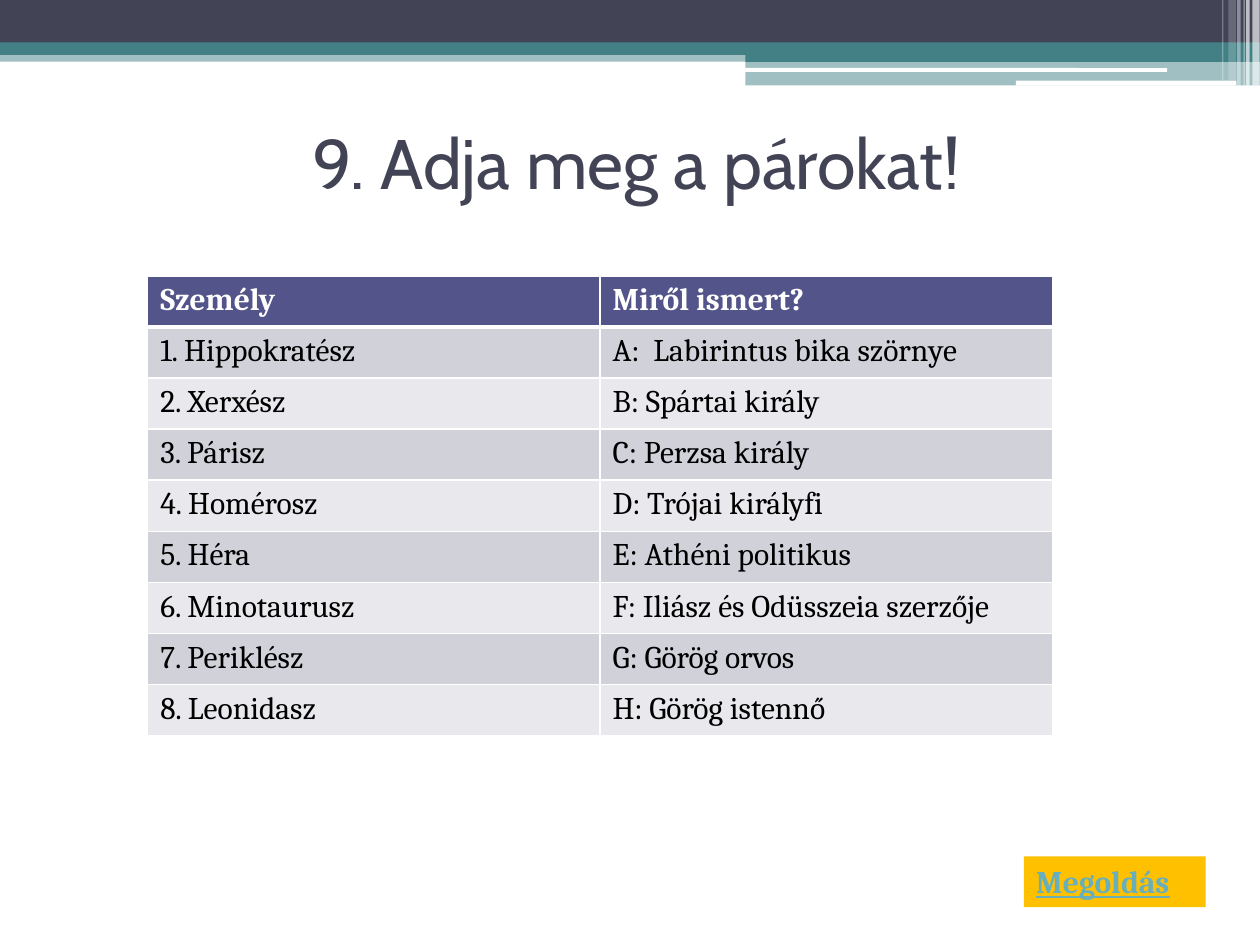
from lxml import etree
from pptx import Presentation
from pptx.dml.color import RGBColor
from pptx.enum.shapes import MSO_SHAPE
from pptx.enum.text import MSO_ANCHOR, MSO_AUTO_SIZE, PP_ALIGN
from pptx.oxml.ns import qn
from pptx.util import Pt

RECT, ROUND = MSO_SHAPE.RECTANGLE, MSO_SHAPE.ROUNDED_RECTANGLE
MIDDLE, CENTER, LEFT = MSO_ANCHOR.MIDDLE, PP_ALIGN.CENTER, PP_ALIGN.LEFT
FIT, NO_FIT = MSO_AUTO_SIZE.SHAPE_TO_FIT_TEXT, MSO_AUTO_SIZE.NONE
TITLE_ONLY = 5

COLORS = {
    "dark": "424456", "teal": "438086", "white": "FFFFFF", "black": "000000",
    "header": "53548A", "odd": "D1D1DA", "even": "E9E9ED",
    "button": "FFC000", "link": "67AFBD",
}

BANDS = [
    (0, 28.8, 720, 6.48, "teal", 50),
    (0, 0, 720, 24.48, "dark", 100),
    (0, 24.2, 720, 7.2, "teal", 100),
    (426, 28.2, 294, 7.2, "teal", 100),
    (426, 34.8, 294, 14, "teal", 50),
]
HIGHLIGHTS = [(425.7, 38.9, 241.2, 2.16), (580.5, 46.1, 126, 2.88)]
STRIPES = [
    (715.7, 4.2, 49, 65), (712.1, 2, 49, 65), (710.6, 0.72, 49, 60),
    (707, 2, 49, 40), (702, 4.3, 46, 20), (698.4, 0.72, 46, 30),
]
PAIRS = [
    ("Személy", "Miről ismert?"),
    ("1. Hippokratész", "A:  Labirintus bika szörnye"),
    ("2. Xerxész", "B: Spártai király"),
    ("3. Párisz", "C: Perzsa király"),
    ("4. Homérosz", "D: Trójai királyfi"),
    ("5. Héra", "E: Athéni politikus"),
    ("6. Minotaurusz", "F: Iliász és Odüsszeia szerzője"),
    ("7. Periklész", "G: Görög orvos"),
    ("8. Leonidasz", "H: Görög istennő"),
]


def rgb(name):
    return RGBColor.from_string(COLORS[name])


def add_line(parent, index, tag, color, width):
    ln = etree.Element(qn(tag), w=str(Pt(width)))
    fill = etree.SubElement(ln, qn("a:solidFill"))
    etree.SubElement(fill, qn("a:srgbClr"), val=COLORS[color])
    parent.insert(index, ln)


def write(tf, text, font="Cambria", size=18, color="black", bold=False,
          underline=False, align=LEFT, hanging=0, outline=None):
    p = tf.paragraphs[0]
    p.alignment = align
    if hanging:
        pPr = p._p.get_or_add_pPr()
        pPr.set("marL", str(Pt(hanging)))
        pPr.set("indent", str(-Pt(hanging)))
    r = p.add_run()
    r.text = text
    r.font.name, r.font.size = font, Pt(size)
    r.font.bold, r.font.underline = bold, underline
    r.font.color.rgb = rgb(color)
    if outline:
        add_line(r._r.get_or_add_rPr(), 0, "a:ln", outline, 1.4)


class Deck:
    def __init__(self):
        self.prs = Presentation()
        self.prs.slide_width, self.prs.slide_height = Pt(720), Pt(540)
        self.s = self.prs.slides.add_slide(self.prs.slide_layouts[TITLE_ONLY])

    def bar(self, x, y, w, h, color="white", opacity=100, kind=RECT):
        sp = self.s.shapes.add_shape(kind, Pt(x), Pt(y), Pt(w), Pt(h))
        sp.shadow.inherit = False
        sp.line.fill.background()
        sp.fill.solid()
        sp.fill.fore_color.rgb = rgb(color)
        if opacity < 100:
            clr = sp._element.spPr.find(".//" + qn("a:srgbClr"))
            etree.SubElement(clr, qn("a:alpha"), val=str(opacity * 1000))

    def title(self, text, x, y, w, h):
        sp = self.s.shapes.title
        sp.left, sp.top, sp.width, sp.height = Pt(x), Pt(y), Pt(w), Pt(h)
        tf = sp.text_frame
        tf.auto_size, tf.vertical_anchor = NO_FIT, MIDDLE
        write(tf, text, font="Cabin", size=40, color="dark", align=CENTER)
        tree = self.s.shapes._spTree
        tree.append(sp._element)

    def button(self, text, x, y, w, h):
        sp = self.s.shapes.add_textbox(Pt(x), Pt(y), Pt(w), Pt(h))
        sp.fill.solid()
        sp.fill.fore_color.rgb = rgb("button")
        tf = sp.text_frame
        tf.word_wrap, tf.auto_size = False, FIT
        write(tf, text, color="link", bold=True, underline=True, outline="white")

    def table(self, rows, x, y, w, row_h):
        frame = self.s.shapes.add_table(len(rows), len(rows[0]), Pt(x), Pt(y),
                                        Pt(w), Pt(row_h * len(rows)))
        for i, row in enumerate(rows):
            for j, text in enumerate(row):
                self.cell(frame.table.cell(i, j), text, i)

    def cell(self, cell, text, i):
        head = i == 0
        cell.fill.solid()
        cell.fill.fore_color.rgb = rgb("header" if head else ("even", "odd")[i % 2])
        widths = {"L": 1, "R": 1, "T": 3 if i == 1 else 1, "B": 3 if head else 1}
        tcPr = cell._tc.get_or_add_tcPr()
        for index, (side, width) in enumerate(widths.items()):
            add_line(tcPr, index, "a:ln" + side, "white", width)
        write(cell.text_frame, text, color="white" if head else "black",
              bold=head, hanging=0 if head else 27)


def main():
    deck = Deck()
    for band in BANDS:
        deck.bar(*band)
    for highlight in HIGHLIGHTS:
        deck.bar(*highlight, kind=ROUND)
    for x, w, h, opacity in STRIPES:
        deck.bar(x, 0, w, h, opacity=opacity)
    deck.title("9. Adja meg a párokat!", 39.6, 50.4, 648, 84.2)
    deck.button("Megoldás", 585, 489.3, 104, 29.1)
    deck.table(PAIRS, 84.4, 157.6, 517, 29.2)
    deck.prs.save("out.pptx")


if __name__ == "__main__":
    main()
